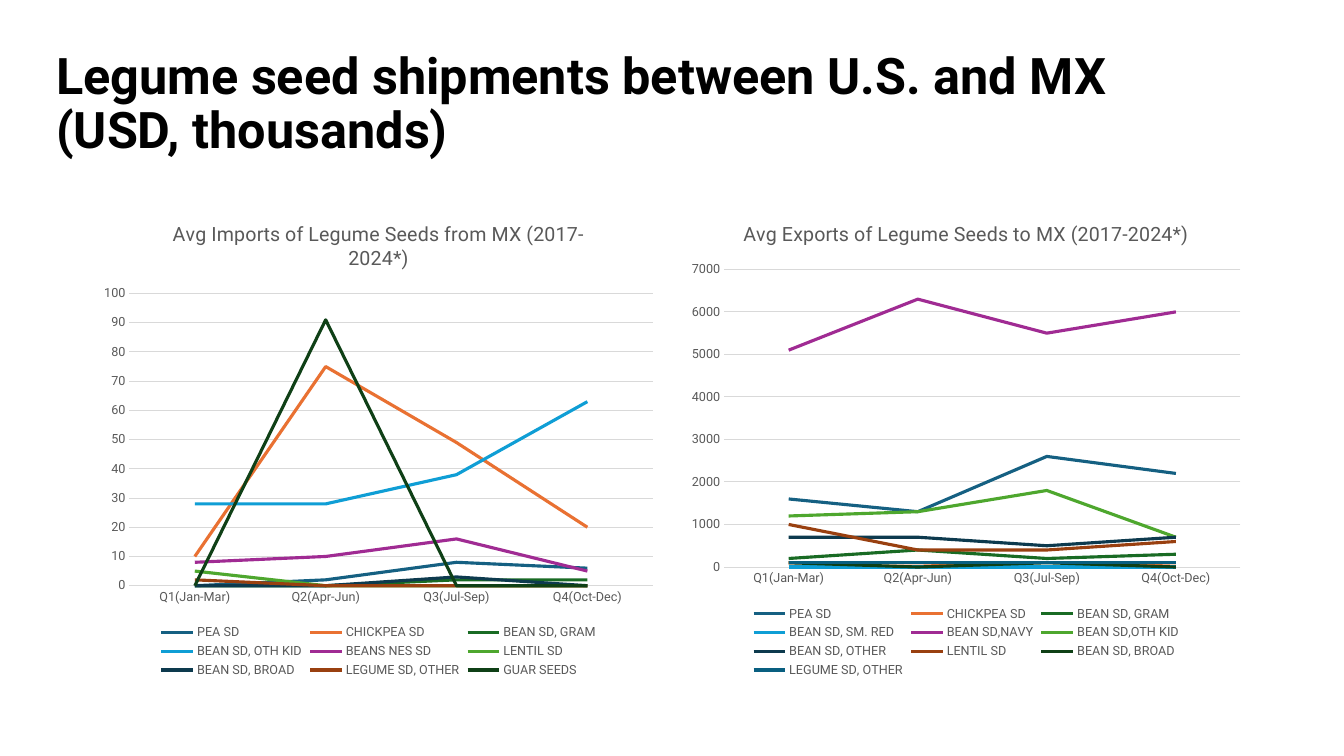
from pptx import Presentation
from pptx.chart.data import CategoryChartData
from pptx.dml.color import RGBColor
from pptx.enum import chart as ch, text
from pptx.util import Pt

FONT = "Roboto"
BLACK = RGBColor(0x00, 0x00, 0x00)
GRAY = RGBColor(0x59, 0x59, 0x59)
GRID = RGBColor(0xD9, 0xD9, 0xD9)
SERIES_COLORS = [
    RGBColor(0x15, 0x60, 0x82), RGBColor(0xE9, 0x71, 0x32),
    RGBColor(0x19, 0x6B, 0x24), RGBColor(0x0F, 0x9E, 0xD5),
    RGBColor(0xA0, 0x2B, 0x93), RGBColor(0x4E, 0xA7, 0x2E),
    RGBColor(0x0D, 0x3A, 0x4E), RGBColor(0x99, 0x40, 0x10),
    RGBColor(0x0F, 0x40, 0x16), RGBColor(0x09, 0x5F, 0x80),
]

QUARTERS = ["Q1(Jan-Mar)", "Q2(Apr-Jun)", "Q3(Jul-Sep)", "Q4(Oct-Dec)"]
IMPORTS = {
    "PEA SD": (0, 2, 8, 6),
    "CHICKPEA SD": (10, 75, 49, 20),
    "BEAN SD, GRAM": (0, 0, 2, 2),
    "BEAN SD, OTH KID": (28, 28, 38, 63),
    "BEANS NES SD": (8, 10, 16, 5),
    "LENTIL SD": (5, 0, 0, 0),
    "BEAN SD, BROAD": (0, 0, 3, 0),
    "LEGUME SD, OTHER": (2, 0, 0, 0),
    "GUAR SEEDS": (0, 91, 0, 0),
}
EXPORTS = {
    "PEA SD": (1600, 1300, 2600, 2200),
    "CHICKPEA SD": (100, 100, 0, 100),
    "BEAN SD, GRAM": (200, 400, 200, 300),
    "BEAN SD, SM. RED": (0, 0, 0, 0),
    "BEAN SD,NAVY": (5100, 6300, 5500, 6000),
    "BEAN SD,OTH KID": (1200, 1300, 1800, 700),
    "BEAN SD, OTHER": (700, 700, 500, 700),
    "LENTIL SD": (1000, 400, 400, 600),
    "BEAN SD, BROAD": (100, 0, 100, 0),
    "LEGUME SD, OTHER": (100, 100, 100, 100),
}
# left edge, title, series, axis maximum, axis step
CHARTS = [
    (66.24, "Avg Imports of Legume Seeds from MX (2017-2024*)", IMPORTS, 100, 10),
    (486, "Avg Exports of Legume Seeds to MX (2017-2024*)", EXPORTS, 7000, 1000),
]


def set_font(font, size, color, bold=False):
    font.name = FONT
    font.size = Pt(size)
    font.bold = bold
    font.color.rgb = color


prs = Presentation()
prs.slide_width, prs.slide_height = Pt(960), Pt(540)
s = prs.slides.add_slide(prs.slide_layouts[6])

# Heading
tf = s.shapes.add_textbox(Pt(33.12), Pt(23.04), Pt(828), Pt(104.4)).text_frame
tf.word_wrap = True
tf.vertical_anchor = text.MSO_ANCHOR.MIDDLE
lines = ["Legume seed shipments between U.S. and MX", "(USD, thousands)"]
for i, line in enumerate(lines):
    p = tf.add_paragraph() if i else tf.paragraphs[0]
    p.line_spacing = 0.9
    r = p.add_run()
    r.text = line
    set_font(r.font, 36, BLACK, bold=True)

# Line charts
for left, title, shipments, top_value, step in CHARTS:
    data = CategoryChartData()
    data.categories = QUARTERS
    for name, values in shipments.items():
        data.add_series(name, values)
    chart = s.shapes.add_chart(ch.XL_CHART_TYPE.LINE, Pt(left), Pt(144),
                               Pt(408.24), Pt(342.72), data).chart
    set_font(chart.font, 10, BLACK)

    chart.has_title = True
    p = chart.chart_title.text_frame.paragraphs[0]
    r = p.add_run()
    r.text = title
    set_font(r.font, 14, GRAY)
    chart.chart_title.include_in_layout = False

    chart.has_legend = True
    chart.legend.position = ch.XL_LEGEND_POSITION.BOTTOM
    chart.legend.include_in_layout = False
    set_font(chart.legend.font, 9, GRAY)

    quarters, amounts = chart.category_axis, chart.value_axis
    for axis in (quarters, amounts):
        axis.major_tick_mark = axis.minor_tick_mark = ch.XL_TICK_MARK.NONE
        set_font(axis.tick_labels.font, 9, GRAY)
    amounts.minimum_scale, amounts.maximum_scale = 0, top_value
    amounts.major_unit = step
    amounts.has_major_gridlines = True
    amounts.format.line.fill.background()
    for line in (quarters.format.line, amounts.major_gridlines.format.line):
        line.color.rgb = GRID
        line.width = Pt(0.75)

    plot = chart.plots[0]
    plot.vary_by_categories = False
    for series, color in zip(plot.series, SERIES_COLORS):
        series.smooth = False
        series.marker.style = ch.XL_MARKER_STYLE.NONE
        series.format.line.color.rgb = color
        series.format.line.width = Pt(2.25)

prs.save("out.pptx")
